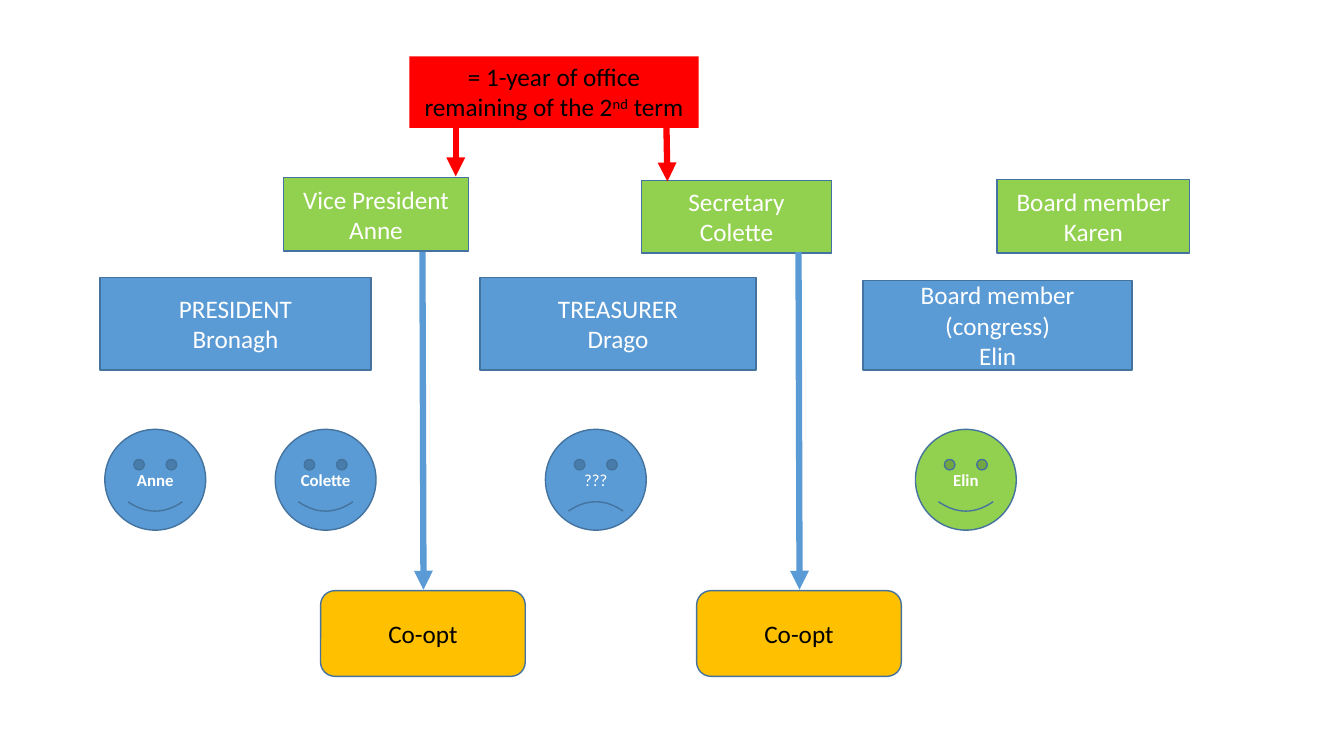
from lxml.etree import SubElement
from pptx import Presentation
from pptx.dml.color import RGBColor
from pptx.enum.shapes import MSO_CONNECTOR, MSO_SHAPE
from pptx.enum.text import MSO_ANCHOR, PP_ALIGN
from pptx.oxml.ns import qn
from pptx.util import Inches, Pt

COLORS = {
    "blue": "5B9BD5",
    "green": "92D050",
    "amber": "FFC000",
    "red": "FF0000",
    "outline": "43739E",
    "white": "FFFFFF",
    "black": "000000",
}


def color(name):
    return RGBColor.from_string(COLORS[name])


def add_run(paragraph, text, size, text_color, bold=False):
    run = paragraph.add_run()
    run.text = text
    run.font.name = "Calibri"
    run.font.size = Pt(size)
    run.font.bold = bold
    run.font.color.rgb = color(text_color)
    return run


def add_box(slide, kind, box, fill, lines, text_color="white", size=18, bold=False):
    shape = slide.shapes.add_shape(kind, *map(Inches, box))
    shape.shadow.inherit = False
    shape.fill.solid()
    shape.fill.fore_color.rgb = color(fill)
    shape.line.color.rgb = color("outline")
    shape.line.width = Pt(1)
    frame = shape.text_frame
    frame.word_wrap = True
    frame.vertical_anchor = MSO_ANCHOR.MIDDLE
    for index, text in enumerate(lines):
        paragraph = frame.add_paragraph() if index else frame.paragraphs[0]
        paragraph.alignment = PP_ALIGN.CENTER
        add_run(paragraph, text, size, text_color, bold)
    return shape


def add_arrow(slide, start, end, line_color):
    arrow = slide.shapes.add_connector(
        MSO_CONNECTOR.STRAIGHT, *map(Inches, (*start, *end))
    )
    arrow.line.color.rgb = color(line_color)
    arrow.line.width = Pt(4.5)
    SubElement(arrow.line._get_or_add_ln(), qn("a:tailEnd"), type="triangle")
    SubElement(arrow._element.spPr, qn("a:effectLst"))


def add_position(slide, box, fill, role, holder):
    add_box(slide, MSO_SHAPE.RECTANGLE, box, fill, [role, holder])


def add_candidate(slide, left, top, fill, name, known=True):
    face = add_box(
        slide, MSO_SHAPE.SMILEY_FACE, (left, top, 1, 1), fill, [name],
        size=12, bold=known,
    )
    if not known:
        face.adjustments[0] = -0.047


def add_term_note(slide, box):
    left, top, width, height = box
    note = add_box(slide, MSO_SHAPE.RECTANGLE, box, "red", [])
    note.line.fill.background()
    note.text_frame.vertical_anchor = MSO_ANCHOR.TOP
    paragraph = note.text_frame.paragraphs[0]
    paragraph.alignment = PP_ALIGN.CENTER
    add_run(paragraph, "= 1-year of office remaining of the 2", 18, "black")
    ordinal = add_run(paragraph, "nd", 18, "black")
    ordinal.font._element.set("baseline", "30000")
    add_run(paragraph, " term", 18, "black")
    bottom = top + height
    add_arrow(slide, (left + 0.46, bottom - 0.03), (left + 0.46, bottom + 0.48), "red")
    add_arrow(slide, (left + 2.55, bottom - 0.01), (left + 2.56, bottom + 0.53), "red")


def add_co_option(slide, box):
    left, top, width, height = box
    add_arrow(slide, (left + 1.01, top - 3.36), (left + 1.02, top - 0.01), "blue")
    add_box(slide, MSO_SHAPE.ROUNDED_RECTANGLE, box, "amber", ["Co-opt"], "black")


def build_board_slide(slide):
    positions = [
        ((0.99, 2.75, 2.69, 0.92), "blue", "PRESIDENT", "Bronagh"),
        ((2.81, 1.76, 1.84, 0.73), "green", "Vice President", "Anne"),
        ((4.76, 2.75, 2.74, 0.92), "blue", "TREASURER", "Drago"),
        ((6.36, 1.79, 1.89, 0.72), "green", "Secretary", "Colette"),
        ((8.56, 2.78, 2.67, 0.89), "blue", "Board member (congress)", "Elin"),
        ((9.89, 1.78, 1.91, 0.73), "green", "Board member", "Karen"),
    ]
    for position in positions:
        add_position(slide, *position)

    candidates = [
        (1.04, "blue", "Anne", True),
        (2.73, "blue", "Colette", True),
        (5.41, "blue", "???", False),
        (9.08, "green", "Elin", True),
    ]
    for left, fill, name, known in candidates:
        add_candidate(slide, left, 4.26, fill, name, known)

    for left in (3.18, 6.91):
        add_co_option(slide, (left, 5.86, 2.03, 0.85))
    add_term_note(slide, (4.06, 0.56, 2.87, 0.71))


def main():
    presentation = Presentation()
    presentation.slide_width = Inches(13.33)
    presentation.slide_height = Inches(7.5)
    slide = presentation.slides.add_slide(presentation.slide_layouts[6])
    build_board_slide(slide)
    presentation.save("out.pptx")


if __name__ == "__main__":
    main()
